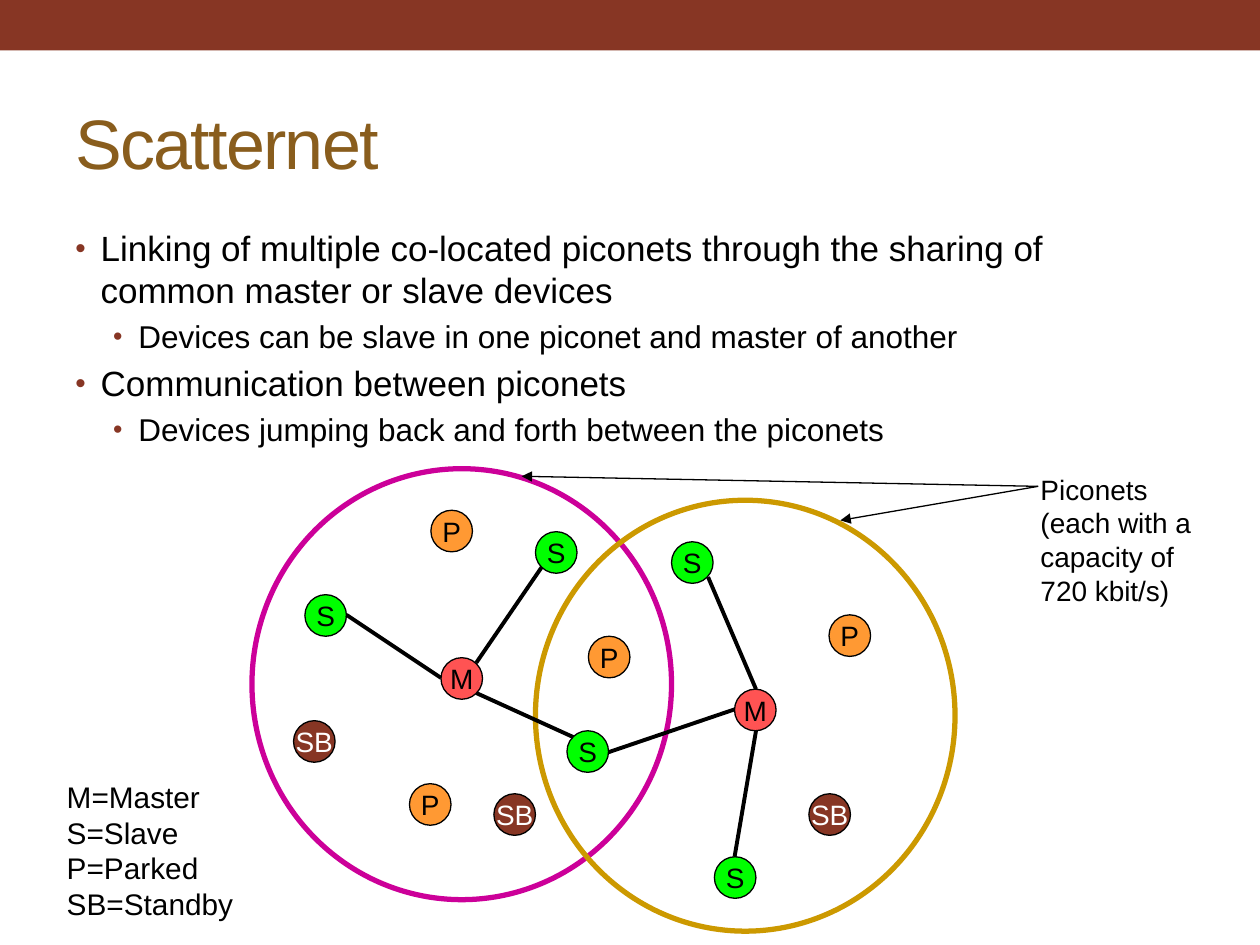
from pptx import Presentation
from pptx.dml.color import RGBColor
from pptx.enum.shapes import MSO_CONNECTOR, MSO_SHAPE
from pptx.enum.text import MSO_ANCHOR, MSO_AUTO_SIZE, PP_ALIGN
from pptx.oxml.ns import qn
from pptx.util import Inches, Pt
from lxml.etree import SubElement

HUES = {"rust": "873624", "gold": "CC9900", "plum": "CC0099", "title": "895D1D",
        "black": "000000", "white": "FFFFFF", "red": "FF5353",
        "green": "00FF00", "orange": "FF9933"}
TITLE = "Scatternet"
POINTS = [
    (0, "Linking of multiple co-located piconets through the sharing of common master or slave devices"),
    (1, "Devices can be slave in one piconet and master of another"),
    (0, "Communication between piconets"),
    (1, "Devices jumping back and forth between the piconets"),
]
LEVELS = [(20, 0.2), (18, 0.5)]
LEGEND = ["M=Master", "S=Slave", "P=Parked", "SB=Standby"]
NOTE = ["Piconets", "(each with a", "capacity of", "720 kbit/s)"]
RINGS = [(2, 3.72, "plum"), (4.25, 3.97, "gold")]
ROLES = {"M": ("red", "black"), "S": ("green", "black"),
         "P": ("orange", "black"), "SB": ("rust", "white")}
NODES = {
    "M": [(3.5, 5.22), (5.83, 5.47)],
    "S": [(2.42, 4.72), (4.25, 4.22), (4.5, 5.8), (5.33, 4.3), (5.67, 6.8)],
    "P": [(3.25, 6.22), (3.42, 4.05), (4.67, 5.05), (6.58, 4.88)],
    "SB": [(2.33, 5.72), (3.92, 6.3), (6.42, 6.3)],
}
LINKS = [
    (3.5, 5.38, 2.75, 4.88), (3.78, 5.26, 4.3, 4.5), (4.55, 5.85, 3.78, 5.5),
    (6, 5.47, 5.62, 4.58), (5.83, 5.63, 4.83, 5.97), (6, 5.8, 5.83, 6.8),
]
ARROWS = [(8.24, 3.86, 4.14, 3.78), (8.24, 3.86, 6.67, 4.13)]


def hue(name):
    return RGBColor.from_string(HUES[name])


def put(item, **values):
    for key, value in values.items():
        setattr(item, key, value)


def style(font, size, color):
    put(font, name="Arial", size=Pt(size))
    font.color.rgb = hue(color)


def shape(kind, box, fill=None, edge=None, width=0.75):
    item = slide.shapes.add_shape(kind, *map(Inches, box))
    item.shadow.inherit = False
    if fill:
        item.fill.solid()
        item.fill.fore_color.rgb = hue(fill)
    else:
        item.fill.background()
    if edge:
        item.line.color.rgb = hue(edge)
        item.line.width = Pt(width)
    else:
        item.line.fill.background()
    return item


def label(box, lines, size, side=0.1):
    frame = slide.shapes.add_textbox(*map(Inches, box)).text_frame
    put(frame, word_wrap=True, auto_size=MSO_AUTO_SIZE.NONE,
        margin_left=Inches(side), margin_right=Inches(0))
    frame.text = "\n".join(lines)
    for para in frame.paragraphs:
        style(para.font, size, "black")


def link(ends, width, arrow=False):
    line = slide.shapes.add_connector(MSO_CONNECTOR.STRAIGHT, *map(Inches, ends))
    line.line.color.rgb = hue("black")
    line.line.width = Pt(width)
    if arrow:
        SubElement(line.line._get_or_add_ln(), qn("a:tailEnd"), type="triangle")
    SubElement(line._element.spPr, qn("a:effectLst"))


def bullet(para, level, text):
    size, indent = LEVELS[level]
    props = para._p.get_or_add_pPr()
    props.set("marL", str(Inches(indent)))
    props.set("indent", str(Inches(-0.2)))
    color = SubElement(props, qn("a:buClr"))
    SubElement(color, qn("a:srgbClr"), val=HUES["rust"])
    SubElement(props, qn("a:buSzPct"), val="85000")
    SubElement(props, qn("a:buFont"), typeface="Arial")
    SubElement(props, qn("a:buChar"), char="•")
    put(para, text=text, level=level)
    style(para.font, size, "black")
    return size


deck = Presentation()
put(deck, slide_width=Inches(10), slide_height=Inches(7.5))
slide = deck.slides.add_slide(deck.slide_layouts[5])

shape(MSO_SHAPE.RECTANGLE, (0, 0, 10, 0.4), "rust")
for left, top, color in RINGS:
    shape(MSO_SHAPE.OVAL, (left, top, 3.33, 3.42), edge=color, width=3)

title = slide.shapes.title
put(title, left=Inches(0.5), top=Inches(0.58), width=Inches(9), height=Inches(1.08))
put(title.text_frame, text=TITLE, vertical_anchor=MSO_ANCHOR.MIDDLE)
head = title.text_frame.paragraphs[0]
head.alignment = PP_ALIGN.LEFT
style(head.runs[0].font, 40, "title")
head.runs[0]._r.get_or_add_rPr().set("spc", "-100")

body = slide.shapes.add_textbox(*map(Inches, (0.5, 1.75, 9, 5.33))).text_frame
body.word_wrap = True
for index, (level, text) in enumerate(POINTS):
    para = body.add_paragraph() if index else body.paragraphs[0]
    size = bullet(para, level, text)
    if index:
        para.space_before = Pt(size * 0.2)

label((0.42, 6.13, 1.54, 1.24), LEGEND, 17, 0.11)
label((8.16, 3.7, 1.46, 1.17), NOTE, 16)

for role, spots in NODES.items():
    fill, ink = ROLES[role]
    for left, top in spots:
        node = shape(MSO_SHAPE.OVAL, (left, top, 0.33, 0.33), fill, "black")
        put(node.text_frame, text=role, word_wrap=False, vertical_anchor=MSO_ANCHOR.MIDDLE)
        para = node.text_frame.paragraphs[0]
        para.alignment = PP_ALIGN.CENTER
        style(para.font, 16, ink)

for ends in LINKS:
    link(ends, 2.25)
for ends in ARROWS:
    link(ends, 0.75, True)

deck.save("out.pptx")
